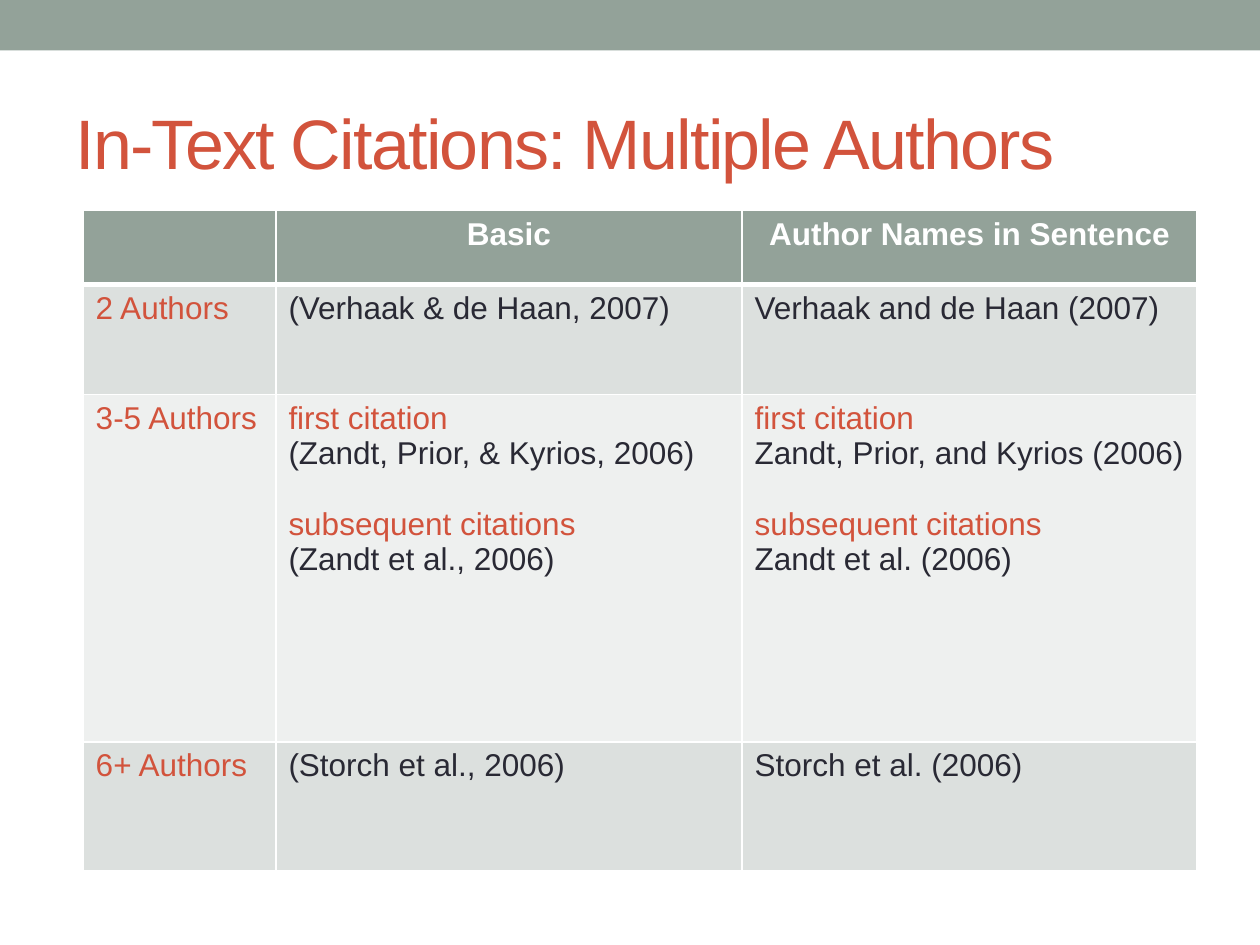
from dataclasses import dataclass

from pptx import Presentation
from pptx.dml.color import RGBColor
from pptx.enum.shapes import MSO_SHAPE as Shape
from pptx.enum.text import MSO_ANCHOR as Anchor, PP_ALIGN as Align
from pptx.oxml import parse_xml
from pptx.oxml.ns import nsdecls
from pptx.util import Inches, Pt


@dataclass(frozen=True)
class Theme:
    font: str = "Arial"
    sage: str = "93A299"
    accent: str = "D2533C"
    ink: str = "292934"
    white: str = "FFFFFF"
    bands: tuple = ("DCE0DE", "EEF0EF")
    title_size: int = 40
    body_size: int = 18
    group_gap: float = 20.3


THEME = Theme()

COLUMN_WIDTHS = (1.53, 3.7, 3.61)
ROW_HEIGHTS = (0.59, 0.87, 2.76, 1.02)
HEADINGS = ("", "Basic", "Author Names in Sentence")
FIRST, SUBSEQUENT = "first citation", "subsequent citations"
CITATIONS = (
    ("2 Authors", ["(Verhaak & de Haan, 2007)"], ["Verhaak and de Haan (2007)"]),
    (
        "3-5 Authors",
        [FIRST, "(Zandt, Prior, & Kyrios, 2006)", SUBSEQUENT, "(Zandt et al., 2006)"],
        [FIRST, "Zandt, Prior, and Kyrios (2006)", SUBSEQUENT, "Zandt et al. (2006)"],
    ),
    ("6+ Authors", ["(Storch et al., 2006)"], ["Storch et al. (2006)"]),
)


def write(para, text, size=THEME.body_size, color=THEME.ink, bold=False,
          align=Align.LEFT, before=0, spacing=None):
    para.alignment = align
    para.space_before = Pt(before)
    span = para.add_run()
    span.text = text
    span.font.name = THEME.font
    span.font.size = Pt(size)
    span.font.bold = bold
    span.font.color.rgb = RGBColor.from_string(color)
    if spacing is not None:
        span.font._element.set("spc", str(int(spacing * 100)))


def add_band(page, width):
    band = page.shapes.add_shape(Shape.RECTANGLE, 0, 0, width, Inches(0.4))
    band.shadow.inherit = False
    band.fill.solid()
    band.fill.fore_color.rgb = RGBColor.from_string(THEME.sage)
    band.line.fill.background()


def set_title(page, text):
    title = page.shapes.title
    title.left, title.top = Inches(0.5), Inches(0.58)
    title.width, title.height = Inches(9), Inches(1.08)
    title.text_frame.vertical_anchor = Anchor.MIDDLE
    write(title.text_frame.paragraphs[0], text, size=THEME.title_size,
          color=THEME.accent, spacing=-1)


def style_cell(cell, fill, top=1, bottom=1):
    # Borders come before the fill in the cell properties
    properties = cell._tc.get_or_add_tcPr()
    for side, width in (("L", 1), ("R", 1), ("T", top), ("B", bottom)):
        properties.append(parse_xml(
            f'<a:ln{side} {nsdecls("a")} w="{Pt(width)}"><a:solidFill>'
            f'<a:srgbClr val="{THEME.white}"/></a:solidFill></a:ln{side}>'))
    cell.fill.solid()
    cell.fill.fore_color.rgb = RGBColor.from_string(fill)


def fill_citations(cell, lines):
    frame = cell.text_frame
    for index, line in enumerate(lines):
        para = frame.paragraphs[0] if index == 0 else frame.add_paragraph()
        color = THEME.accent if line in (FIRST, SUBSEQUENT) else THEME.ink
        write(para, line, color=color,
              before=THEME.group_gap if line == SUBSEQUENT else 0)


def add_citation_table(page):
    table = page.shapes.add_table(
        len(ROW_HEIGHTS), len(COLUMN_WIDTHS), Inches(0.66), Inches(1.67),
        Inches(sum(COLUMN_WIDTHS)), Inches(sum(ROW_HEIGHTS))).table
    table.horz_banding = False
    for column, width in zip(table.columns, COLUMN_WIDTHS):
        column.width = Inches(width)
    for row, height in zip(table.rows, ROW_HEIGHTS):
        row.height = Inches(height)

    # Header row
    for cell, heading in zip(table.rows[0].cells, HEADINGS):
        style_cell(cell, THEME.sage, bottom=3)
        if heading:
            write(cell.text_frame.paragraphs[0], heading, color=THEME.white,
                  bold=True, align=Align.CENTER)

    # Citation rows in alternating shades
    for index, (label, *citations) in enumerate(CITATIONS):
        cells = list(table.rows[index + 1].cells)
        for cell in cells:
            style_cell(cell, THEME.bands[index % 2], top=3 if index == 0 else 1)
        write(cells[0].text_frame.paragraphs[0], label, color=THEME.accent)
        for cell, lines in zip(cells[1:], citations):
            fill_citations(cell, lines)


def main():
    deck = Presentation()
    deck.slide_width, deck.slide_height = Inches(10), Inches(7.5)
    page = deck.slides.add_slide(deck.slide_layouts[5])
    add_band(page, deck.slide_width)
    set_title(page, "In-Text Citations: Multiple Authors")
    add_citation_table(page)
    deck.save("out.pptx")


if __name__ == "__main__":
    main()
